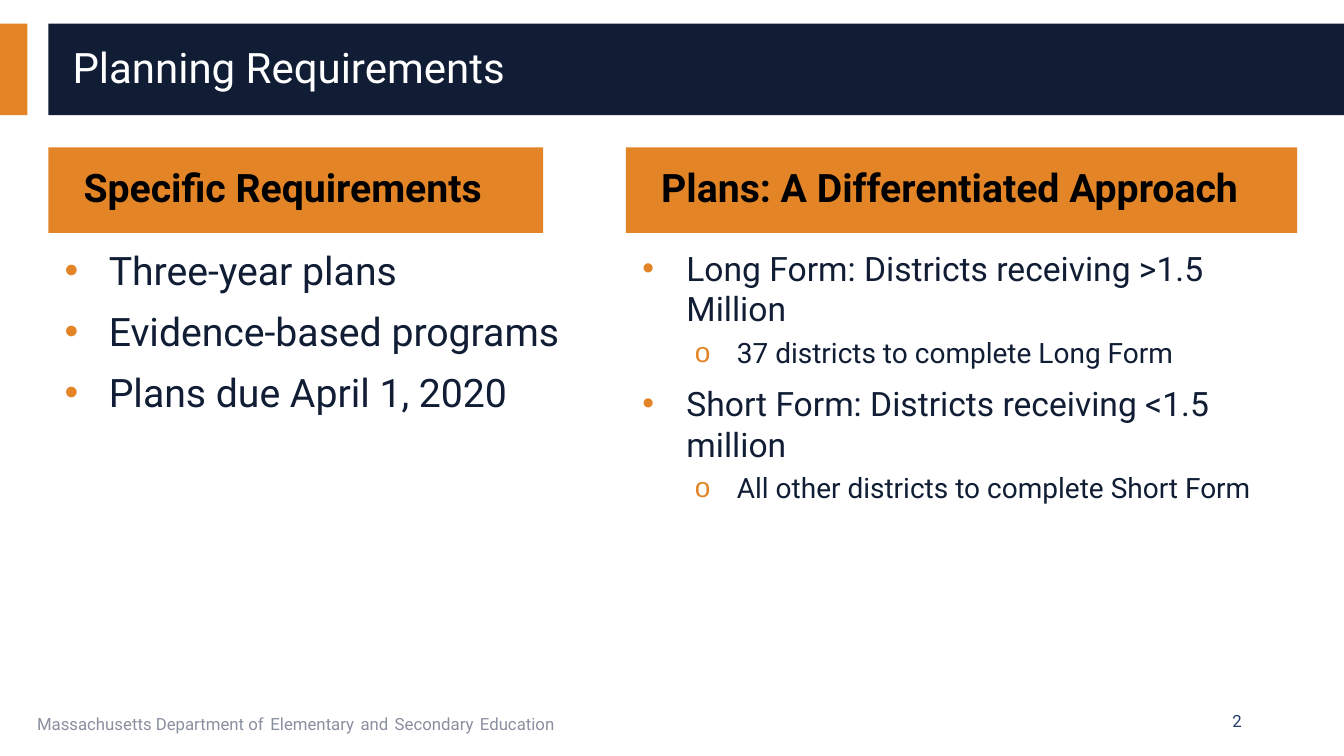
from lxml import etree
from pptx import Presentation
from pptx.dml.color import RGBColor
from pptx.enum.shapes import MSO_SHAPE
from pptx.enum.text import MSO_ANCHOR, MSO_AUTO_SIZE, PP_ALIGN
from pptx.oxml.ns import qn
from pptx.util import Pt

RECTANGLE = MSO_SHAPE.RECTANGLE
TOP, MIDDLE = MSO_ANCHOR.TOP, MSO_ANCHOR.MIDDLE
NO_AUTOFIT = MSO_AUTO_SIZE.NONE
LEFT, RIGHT = PP_ALIGN.LEFT, PP_ALIGN.RIGHT

ORANGE = RGBColor(0xE3, 0x85, 0x26)
NAVY = RGBColor(0x10, 0x1D, 0x34)
BLUE = RGBColor(0x20, 0x3B, 0x6A)
GRAY = RGBColor(0x8A, 0x8F, 0xA0)
BLACK = RGBColor(0, 0, 0)
WHITE = RGBColor(0xFF, 0xFF, 0xFF)

FONT = "Roboto"
COMPARISON_LAYOUT = 4
LEFT_COLUMN, RIGHT_COLUMN = 34.5, 447.1
RIGHT_WIDTH = 479.5

# Bullet, left margin, hanging indent and space before, by list level
LEVELS = [("•", 36, -31.5, 10), ("o", 72, -30, 5)]


def set_values(target, values):
    for name, value in values.items():
        setattr(target, name, value)


def set_font(font, size, color, bold=False):
    set_values(font, {"name": FONT, "size": Pt(size), "bold": bold})
    font.color.rgb = color


def set_indent(paragraph, margin, indent):
    properties = paragraph._p.get_or_add_pPr()
    properties.set("marL", str(Pt(margin)))
    properties.set("indent", str(Pt(indent)))
    return properties


def add_bullet(paragraph, character, margin, indent):
    properties = set_indent(paragraph, margin, indent)
    bullet_color = etree.SubElement(properties, qn("a:buClr"))
    etree.SubElement(bullet_color, qn("a:srgbClr"), val=str(ORANGE))
    etree.SubElement(properties, qn("a:buChar"), char=character)


def place(shape, left, top, width, height, anchor):
    set_values(shape, {"left": Pt(left), "top": Pt(top),
                       "width": Pt(width), "height": Pt(height)})
    set_values(shape.text_frame, {"word_wrap": True, "auto_size": NO_AUTOFIT,
                                  "vertical_anchor": anchor})
    return shape.text_frame


def add_bar(slide, left, width, color):
    bar = slide.shapes.add_shape(RECTANGLE, Pt(left), Pt(16.8), Pt(width), Pt(65.4))
    bar.shadow.inherit = False
    bar.fill.solid()
    bar.fill.fore_color.rgb = color
    bar.line.fill.background()


def fill_title(shape, text):
    paragraph = place(shape, 44.6, 23, 900, 53.3, MIDDLE).paragraphs[0]
    paragraph.text = text
    set_values(paragraph, {"alignment": LEFT, "line_spacing": 0.9})
    set_font(paragraph.font, 30, WHITE)


def fill_heading(shape, text, left, width):
    paragraph = place(shape, left, 105.2, width, 61.2, MIDDLE).paragraphs[0]
    shape.fill.solid()
    shape.fill.fore_color.rgb = ORANGE
    paragraph.text = text
    set_indent(paragraph, 36, -18)
    set_values(paragraph, {"line_spacing": 0.9, "space_before": Pt(0)})
    set_font(paragraph.font, 28, BLACK, bold=True)


def fill_list(shape, items, sizes, left, top, width):
    frame = place(shape, left, top, width, 298.8, TOP)
    for index, (level, text) in enumerate(items):
        paragraph = frame.add_paragraph() if index else frame.paragraphs[0]
        paragraph.text = text
        character, margin, indent, space = LEVELS[level]
        add_bullet(paragraph, character, margin, indent)
        set_values(paragraph, {"level": level,
                               "space_before": Pt(space if index else 0)})
        set_font(paragraph.font, sizes[level], NAVY)


def add_text_box(slide, left, width, anchor):
    box = slide.shapes.add_textbox(Pt(left), Pt(500.4), Pt(width), Pt(28.8))
    return place(box, left, 500.4, width, 28.8, anchor).paragraphs[0]


def add_run(paragraph, text, size, color):
    run = paragraph.add_run()
    run.text = text
    set_font(run.font, size, color)


def add_footer(slide, parts):
    paragraph = add_text_box(slide, 19.4, 607.7, TOP)
    for index, part in enumerate(parts):
        if index:
            add_run(paragraph, " ", 18, BLUE)
        add_run(paragraph, part, 12, GRAY)


def add_page_number(slide, number):
    paragraph = add_text_box(slide, 678.2, 216, MIDDLE)
    paragraph.alignment = RIGHT
    add_run(paragraph, number, 12, BLUE)


def main():
    presentation = Presentation()
    set_values(presentation, {"slide_width": Pt(960), "slide_height": Pt(540)})
    slide = presentation.slides.add_slide(presentation.slide_layouts[COMPARISON_LAYOUT])
    title, left_heading, left_list, right_heading, right_list = slide.placeholders

    # Title band, moved behind the placeholders
    add_bar(slide, 0, 19.6, ORANGE)
    add_bar(slide, LEFT_COLUMN, 960 - LEFT_COLUMN, NAVY)
    tree = slide.shapes._spTree
    for bar in list(slide.shapes)[-2:]:
        tree.remove(bar._element)
        tree.insert(2, bar._element)
    fill_title(title, "Planning Requirements")

    # Left column
    fill_heading(left_heading, "Specific Requirements", LEFT_COLUMN, 353.5)
    fill_list(left_list, [(0, "Three-year plans"),
                          (0, "Evidence-based programs"),
                          (0, "Plans due April 1, 2020")],
              [28], LEFT_COLUMN, 172.1, 429.1)

    # Right column
    fill_heading(right_heading, "Plans: A Differentiated Approach",
                 RIGHT_COLUMN, RIGHT_WIDTH)
    fill_list(right_list, [(0, "Long Form: Districts receiving >1.5 Million"),
                           (1, "37 districts to complete Long Form"),
                           (0, "Short Form: Districts receiving <1.5 million"),
                           (1, "All other districts to complete Short Form")],
              [24, 20], RIGHT_COLUMN, 173.5, RIGHT_WIDTH)

    # Footer
    add_footer(slide, ["Massachusetts Department of", "Elementary", "and",
                       "Secondary", "Education"])
    add_page_number(slide, "2")
    presentation.save("out.pptx")


if __name__ == "__main__":
    main()
